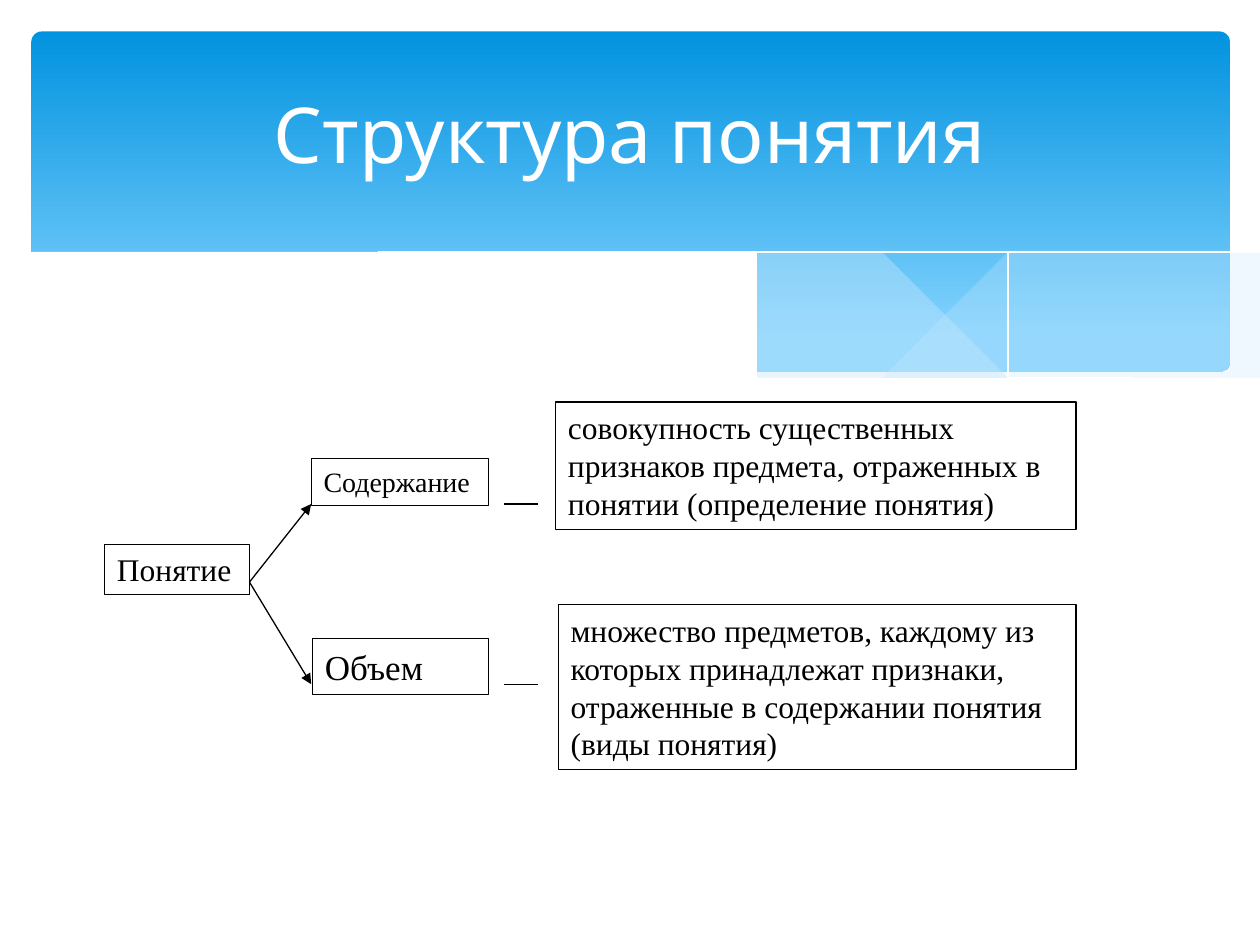
import dataclasses
import typing

import lxml.etree
import pptx
import pptx.dml.color
import pptx.enum.dml
import pptx.enum.shapes
import pptx.enum.text
import pptx.oxml.ns
import pptx.util

Point = tuple[float, float]
Curve = list[Point]
qn = pptx.oxml.ns.qn

COLS, ROWS = 10, 7.5
CELL = pptx.util.Inches(1)
HUES = {"ink": "000000", "paper": "FFFFFF", "top": "0293E0",
        "base": "83D3FE", "mist": "C6E7FC"}
SERIF, SANS = "Times New Roman", "Cabin"


@dataclasses.dataclass
class Box:
    text: str
    col: float
    row: float
    wide: float
    high: float
    size: int = 18


@dataclasses.dataclass
class Link:
    start: Point
    end: Point
    arrow: bool = False


@dataclasses.dataclass
class Wave:
    """Curves joined end to end; filled when fill is set, else outlined."""
    curves: list[Curve]
    fill: str = ""
    alpha: int = 100


WAVES = [
    Wave([[(9.76, 2), (9.35, 2.07), (8.61, 2.23), (7.53, 2.48), (6.61, 2.65)],
          [(6.61, 2.65), (7.19, 2.72), (7.69, 2.77), (8.24, 2.77),
           (8.81, 2.73), (9.28, 2.63), (9.76, 2.47)]], "mist", 29),
    Wave([[(8.93, 2.73), (8.07, 2.6), (7.06, 2.4), (6.29, 2.22), (5.41, 2.03),
           (4.65, 1.91), (3.8, 1.85), (3.28, 1.87), (2.86, 1.91)],
          [(2.86, 1.91), (3.62, 2.03), (4.49, 2.22), (5.3, 2.4), (6.01, 2.55),
           (6.8, 2.68), (7.48, 2.76), (8.18, 2.78), (8.93, 2.73)]],
         "mist", 40),
    Wave([[(3.09, 1.95), (3.53, 1.89), (4.16, 1.87), (4.89, 1.9), (5.82, 2),
           (6.95, 2.19), (7.95, 2.41), (9.07, 2.72)]]),
    Wave([[(6.13, 2.57), (6.95, 2.35), (7.76, 2.16), (8.66, 1.99),
           (9.24, 1.9), (9.75, 1.85)]]),
    Wave([[(0.23, 2.13), (0.59, 1.99), (1.06, 1.89), (1.77, 1.84), (2.5, 1.86),
           (3.4, 1.97), (4.47, 2.2), (5.55, 2.45), (6.48, 2.62), (7.44, 2.74),
           (8.09, 2.77), (8.75, 2.73), (9.3, 2.62), (9.77, 2.46)],
          [(9.77, 3.29), (0.23, 3.29)]], "paper"),
]

BOXES = [
    Box("Понятие", 0.83, 4.32, 1.15, 0.4),
    Box("Содержание", 2.47, 3.64, 1.41, 0.37, 16),
    Box("Объем", 2.48, 5.07, 1.4, 0.44, 20),
    Box("совокупность существенных признаков предмета, отраженных в понятии "
        "(определение понятия)", 4.41, 3.19, 4.13, 1.01),
    Box("множество предметов, каждому из которых принадлежат признаки, "
        "отраженные в содержании понятия (виды понятия)",
        4.43, 4.8, 4.11, 1.31),
]

FORK, UPPER, LOWER = (1.98, 4.62), 4, 5.43
LINKS = [Link(FORK, (2.47, row), True) for row in (UPPER, LOWER)]
LINKS += [Link((4, row), (4.27, row)) for row in (UPPER, LOWER)]


def grid(*cells: float) -> list[int]:
    return [round(cell * CELL) for cell in cells]


def hue(name: str) -> pptx.dml.color.RGBColor:
    return pptx.dml.color.RGBColor.from_string(HUES[name])


def paint(shape: typing.Any, name: str) -> None:
    shape.fill.solid()
    shape.fill.fore_color.rgb = hue(name)


def spline(curve: Curve, steps: int = 6) -> Curve:
    """Sample a smooth Catmull-Rom curve through the given points."""
    ends = [curve[0], *curve, curve[-1]]
    out = [curve[0]]
    for quad in zip(ends, ends[1:], ends[2:], ends[3:]):
        for step in range(1, steps + 1):
            t = step / steps
            out.append(tuple(
                b + t * ((c - a) + t * ((2 * a - 5 * b + 4 * c - d)
                         + t * (3 * b - a - 3 * c + d))) / 2
                for a, b, c, d in zip(*quad)))
    return out


def add_wave(shapes: typing.Any, wave: Wave) -> None:
    points = [point for curve in wave.curves for point in spline(curve)]
    pen = shapes.build_freeform(*points[0], scale=CELL)
    pen.add_line_segments(points[1:], close=bool(wave.fill))
    shape = pen.convert_to_shape()
    shape.shadow.inherit = False
    if not wave.fill:
        shape.fill.background()
        shape.line.color.rgb = hue("paper")
        shape.line.width = pptx.util.Pt(0)
        return
    paint(shape, wave.fill)
    shape.line.fill.background()
    if wave.alpha < 100:
        color = next(shape.element.spPr.iter(qn("a:srgbClr")))
        lxml.etree.SubElement(color, qn("a:alpha"), val=str(wave.alpha * 1000))


def add_banner(shapes: typing.Any) -> None:
    shape = shapes.add_shape(
        pptx.enum.shapes.MSO_SHAPE.ROUNDED_RECTANGLE,
        *grid(0.25, 0.25, 9.51, 2.7))
    shape.adjustments[0] = 0.03
    shape.shadow.inherit = False
    shape.line.fill.background()
    shape.fill.gradient()
    shape.fill.gradient_angle = 270
    stops = zip(shape.fill.gradient_stops, (0, 0.9), ("top", "base"))
    for stop, place, name in stops:
        stop.position = place
        stop.color.rgb = hue(name)


def add_run(para: typing.Any, text: str, size: int, face: str,
            name: str) -> None:
    run = para.add_run()
    run.text = text
    run.font.size = pptx.util.Pt(size)
    run.font.name = face
    run.font.color.rgb = hue(name)


def set_title(shapes: typing.Any, text: str) -> None:
    title = shapes.title
    title.left, title.top, title.width, title.height = grid(0.5, 0.37, 9, 1.37)
    title.text_frame.vertical_anchor = pptx.enum.text.MSO_ANCHOR.MIDDLE
    para = title.text_frame.paragraphs[0]
    para.alignment = pptx.enum.text.PP_ALIGN.CENTER
    add_run(para, text, 44, SANS, "paper")
    shapes.element.append(title.element)  # bring in front of the banner


def add_box(shapes: typing.Any, box: Box) -> None:
    shape = shapes.add_shape(pptx.enum.shapes.MSO_SHAPE.RECTANGLE,
                             *grid(box.col, box.row, box.wide, box.high))
    shape.shadow.inherit = False
    paint(shape, "paper")
    shape.line.color.rgb = hue("ink")
    shape.line.width = pptx.util.Pt(0.75)
    frame = shape.text_frame
    frame.word_wrap = True
    frame.auto_size = pptx.enum.text.MSO_AUTO_SIZE.SHAPE_TO_FIT_TEXT
    frame.vertical_anchor = pptx.enum.text.MSO_ANCHOR.TOP
    para = frame.paragraphs[0]
    para.alignment = pptx.enum.text.PP_ALIGN.LEFT
    para.space_after = pptx.util.Pt(10)
    add_run(para, box.text, box.size, SERIF, "ink")


def add_link(shapes: typing.Any, link: Link) -> None:
    line = shapes.add_connector(pptx.enum.shapes.MSO_CONNECTOR.STRAIGHT,
                                *grid(*link.start, *link.end))
    line.line.color.rgb = hue("ink")
    line.line.width = pptx.util.Pt(0.75)
    props = line.element.spPr
    if link.arrow:
        lxml.etree.SubElement(props.find(qn("a:ln")), qn("a:tailEnd"),
                              type="triangle")
    lxml.etree.SubElement(props, qn("a:effectLst"))


def main() -> None:
    deck = pptx.Presentation()
    deck.slide_width, deck.slide_height = grid(COLS, ROWS)
    shapes = deck.slides.add_slide(deck.slide_layouts[5]).shapes
    add_banner(shapes)
    for wave in WAVES:
        add_wave(shapes, wave)
    set_title(shapes, "Структура понятия")
    for box in BOXES:
        add_box(shapes, box)
    for link in LINKS:
        add_link(shapes, link)
    deck.save("out.pptx")


if __name__ == "__main__":
    main()
